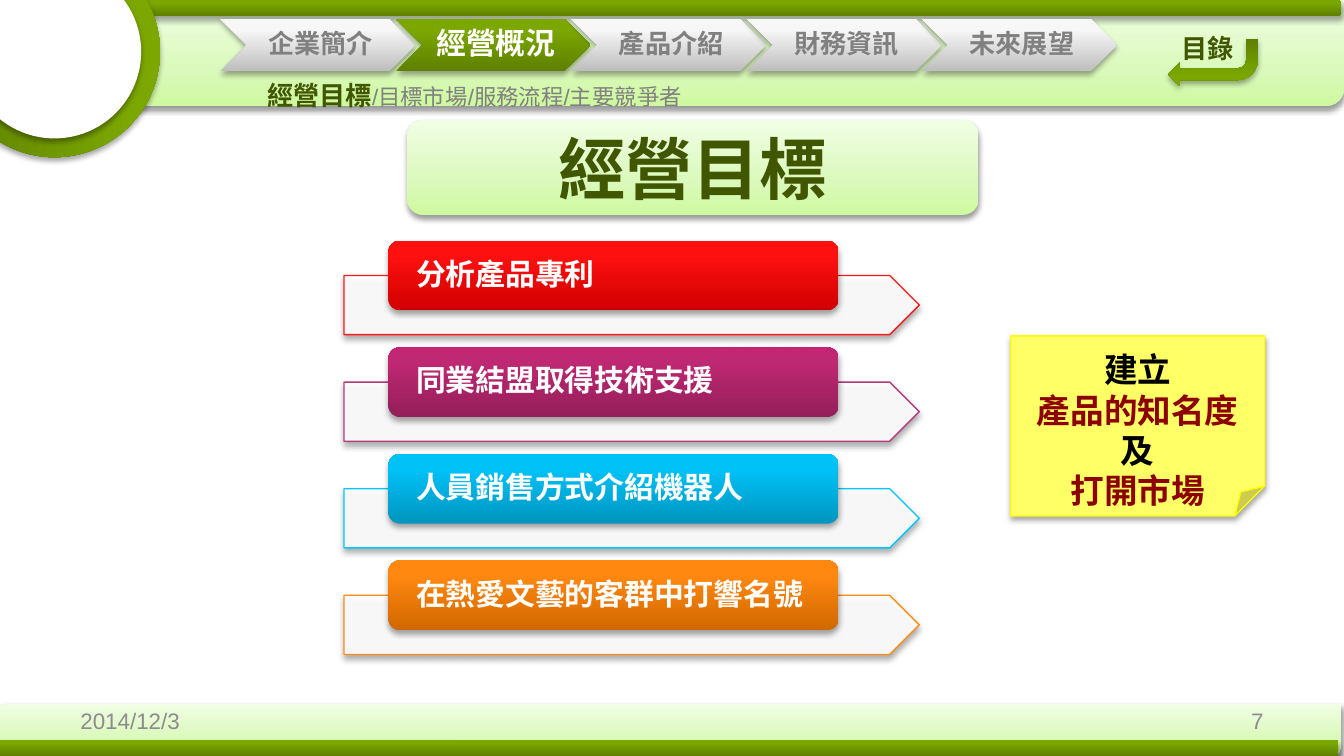
from lxml import etree
from pptx import Presentation
from pptx.dml.color import RGBColor
from pptx.enum.shapes import MSO_SHAPE
from pptx.enum.text import MSO_ANCHOR, MSO_AUTO_SIZE, PP_ALIGN
from pptx.oxml import parse_xml
from pptx.oxml.ns import nsdecls, qn
from pptx.util import Inches, Pt

LEFT, CENTER, RIGHT = PP_ALIGN.LEFT, PP_ALIGN.CENTER, PP_ALIGN.RIGHT
TOP, MIDDLE = MSO_ANCHOR.TOP, MSO_ANCHOR.MIDDLE
NO_AUTOFIT = MSO_AUTO_SIZE.NONE
BAND, ROUNDED, CIRCLE = MSO_SHAPE.ROUND_2_DIAG_RECTANGLE, MSO_SHAPE.ROUNDED_RECTANGLE, MSO_SHAPE.OVAL
CHEVRON, PLATE = MSO_SHAPE.CHEVRON, MSO_SHAPE.PENTAGON
BENT_ARROW, NOTE = MSO_SHAPE.BENT_ARROW, MSO_SHAPE.FOLDED_CORNER

FONT = "Arial"
WHITE, DARK_GREEN, GREY = "FFFFFF", "405600", "808080"
FOOTER_GREY, DARK_RED = "8C8C8C", "8C0000"
PALE = [(0, "CEF99F"), (35, "DBF9BC"), (100, "F1FEE5")]
GREEN = [(0, "5F8000"), (80, "7BA700"), (100, "7CA700")]
SILVER = [(0, "BEBEBE"), (80, "F7F7F7"), (100, "F8F8F8")]

SECTIONS = ["企業簡介", "經營概況", "產品介紹", "財務資訊", "未來展望"]
CURRENT_SECTION = "經營概況"
GOALS = [
    ("分析產品專利", "FF1919", [(0, "D10000"), (80, "FF1010"), (100, "FF1212")]),
    ("同業結盟取得技術支援", "B33B77", [(0, "931F59"), (80, "BF2873"), (100, "C32574")]),
    ("人員銷售方式介紹機器人", "00C8FF", [(0, "0095BE"), (80, "00C2F7"), (100, "00C3F8")]),
    ("在熱愛文藝的客群中打響名號", "FF8C19", [(0, "D16800"), (80, "FF8810"), (100, "FF8812")]),
]
NOTE_LINES = [("建立", "000000"), ("產品的知名度", DARK_RED), ("及", "000000"), ("打開市場", DARK_RED)]


def rgb(value):
    return RGBColor.from_string(value)


def paint(shape, fill, line=None, shadow=35, opacity=None):
    """Fill with a hex colour or bottom-to-top gradient stops; add a soft shadow below."""
    if isinstance(fill, str):
        shape.fill.solid()
        shape.fill.fore_color.rgb = rgb(fill)
        if opacity:
            colour = shape.element.spPr.find(qn("a:solidFill"))[0]
            etree.SubElement(colour, qn("a:alpha"), val=str(opacity * 1000))
    else:
        stops = "".join(f'<a:gs pos="{pos * 1000}"><a:srgbClr val="{colour}"/></a:gs>'
                        for pos, colour in fill)
        shape.element.spPr.append(parse_xml(
            f'<a:gradFill {nsdecls("a")} rotWithShape="1"><a:gsLst>{stops}</a:gsLst>'
            '<a:lin ang="16200000" scaled="0"/></a:gradFill>'))
    if line:
        shape.line.color.rgb = rgb(line)
        shape.line.width = Pt(0.75)
    else:
        shape.line.fill.background()
    shape.shadow.inherit = False
    shape.element.spPr.find(qn("a:effectLst")).append(parse_xml(
        f'<a:outerShdw {nsdecls("a")} blurRad="{Pt(3.1)}" dist="{Pt(1.8)}" dir="5400000" '
        f'rotWithShape="0"><a:srgbClr val="000000"><a:alpha val="{shadow * 1000}"/>'
        '</a:srgbClr></a:outerShdw>'))


def add_painted(slide, preset, box, fill, **style):
    shape = slide.shapes.add_shape(preset, *map(Inches, box))
    paint(shape, fill, **style)
    return shape


def write(shape, runs, size, bold=True, align=LEFT, anchor=MIDDLE, insets=(0.1, 0.05, 0.1, 0.05)):
    """Write (text, colour) runs as one paragraph and return it."""
    frame = shape.text_frame
    frame.word_wrap = True
    frame.auto_size = NO_AUTOFIT
    frame.vertical_anchor = anchor
    frame.margin_left, frame.margin_top, frame.margin_right, frame.margin_bottom = map(Inches, insets)
    paragraph = frame.paragraphs[0]
    paragraph.alignment = align
    paragraph.font.name = FONT
    paragraph.font.size = Pt(size)
    paragraph.font.bold = bold
    for text, colour in runs:
        add_run(paragraph, text, colour)
    return paragraph


def add_run(paragraph, text, colour):
    run = paragraph.add_run()
    run.text = text
    run.font.color.rgb = rgb(colour)


def add_label(slide, box, runs, size, **style):
    return write(slide.shapes.add_textbox(*map(Inches, box)), runs, size, **style)


def add_frame(slide, width, height):
    """Header and footer bands with the round badge in the corner."""
    add_painted(slide, BAND, (-0.02, height - 0.39, width, 0.39), PALE, shadow=38)
    add_painted(slide, BAND, (0, 0, width, 0.79), PALE, shadow=38)
    for left, top in ((0, 0), (-0.02, height - 0.12)):
        add_painted(slide, ROUNDED, (left, top, width - 0.02, 0.12), GREEN)
    for inset, fill in ((0, GREEN), (0.14, WHITE)):
        side = 1.57 - 2 * inset
        badge = add_painted(slide, CIRCLE, (inset - 0.38, inset - 0.4, side, side), fill)
        badge.rotation = 86


def add_navigation(slide, left, top, width, height):
    step = width * 0.9
    for index, section in enumerate(SECTIONS):
        current = section == CURRENT_SECTION
        tab = add_painted(slide, CHEVRON, (left + index * step, top, width, height),
                          GREEN if current else SILVER)
        paragraph = write(tab, [(section, WHITE if current else GREY)], 16 if current else 14,
                          align=CENTER, insets=(0.06, 0.02, 0.02, 0.02))
        paragraph.line_spacing = 0.9


def add_contents_button(slide, left, top):
    arrow = add_painted(slide, BENT_ARROW, (left, top + 0.1, 0.67, 0.35), GREEN)
    arrow.rotation = 180
    add_label(slide, (left, top, 0.93, 0.34), [("目錄", DARK_GREEN)], 14, anchor=TOP)


def add_breadcrumb(slide, box):
    trail = add_label(slide, box, [("經營目標", DARK_GREEN), ("/目標市場/服務流程/主要競爭者", GREY)],
                      12, bold=False, anchor=TOP)
    trail.runs[0].font.size = Pt(14)
    trail.runs[0].font.bold = True


def place_title(slide, box):
    panel = add_painted(slide, ROUNDED, box, PALE, shadow=38)
    title = slide.shapes.title
    title.left, title.top, title.width, title.height = map(Inches, box)
    write(title, [("經營目標", DARK_GREEN)], 36, align=CENTER)
    panel.element.addnext(title.element)


def add_goals(slide, left, top, width, height):
    card_height, plate_drop, plate_height = 0.52, 0.26, 0.44
    step = (height - plate_drop - plate_height) / (len(GOALS) - 1)
    for index, (goal, line, fill) in enumerate(GOALS):
        row = top + index * step
        add_painted(slide, PLATE, (left, row + plate_drop, width, plate_height), WHITE,
                    line=line, opacity=90)
        card = add_painted(slide, ROUNDED, (left + 0.33, row, 3.35, card_height), fill)
        paragraph = write(card, [(goal, WHITE)], 16, insets=(0.18, 0, 0.18, 0))
        paragraph.line_spacing = 0.9


def add_note(slide, box):
    note = add_painted(slide, NOTE, box, "FFFF66", line="FFFF00")
    paragraph = write(note, NOTE_LINES[:1], 18, align=CENTER, anchor=TOP,
                      insets=(0.1, 0.1, 0.1, 0))
    for text, colour in NOTE_LINES[1:]:
        paragraph.add_line_break()
        add_run(paragraph, text, colour)


def add_footer(slide, top):
    for left, text, align in ((0.5, "2014/12/3", LEFT), (7.17, "7", RIGHT)):
        add_label(slide, (left, top, 2.33, 0.3), [(text, FOOTER_GREY)], 12, bold=False, align=align)


def main():
    width = 10
    height = width * 9 / 16
    prs = Presentation()
    prs.slide_width, prs.slide_height = Inches(width), Inches(height)
    slide = prs.slides.add_slide(prs.slide_layouts[5])
    add_frame(slide, width, height)
    add_navigation(slide, 1.64, 0.14, 1.45, 0.39)
    add_contents_button(slide, 8.69, 0.19)
    add_footer(slide, 5.21)
    place_title(slide, (3.03, 0.89, 4.25, 0.71))
    add_goals(slide, 2.56, 1.79, 4.28, 3.08)
    add_note(slide, (7.52, 2.5, 1.89, 1.34))
    add_breadcrumb(slide, (1.89, 0.54, 7.6, 0.34))
    prs.save("out.pptx")


if __name__ == "__main__":
    main()
